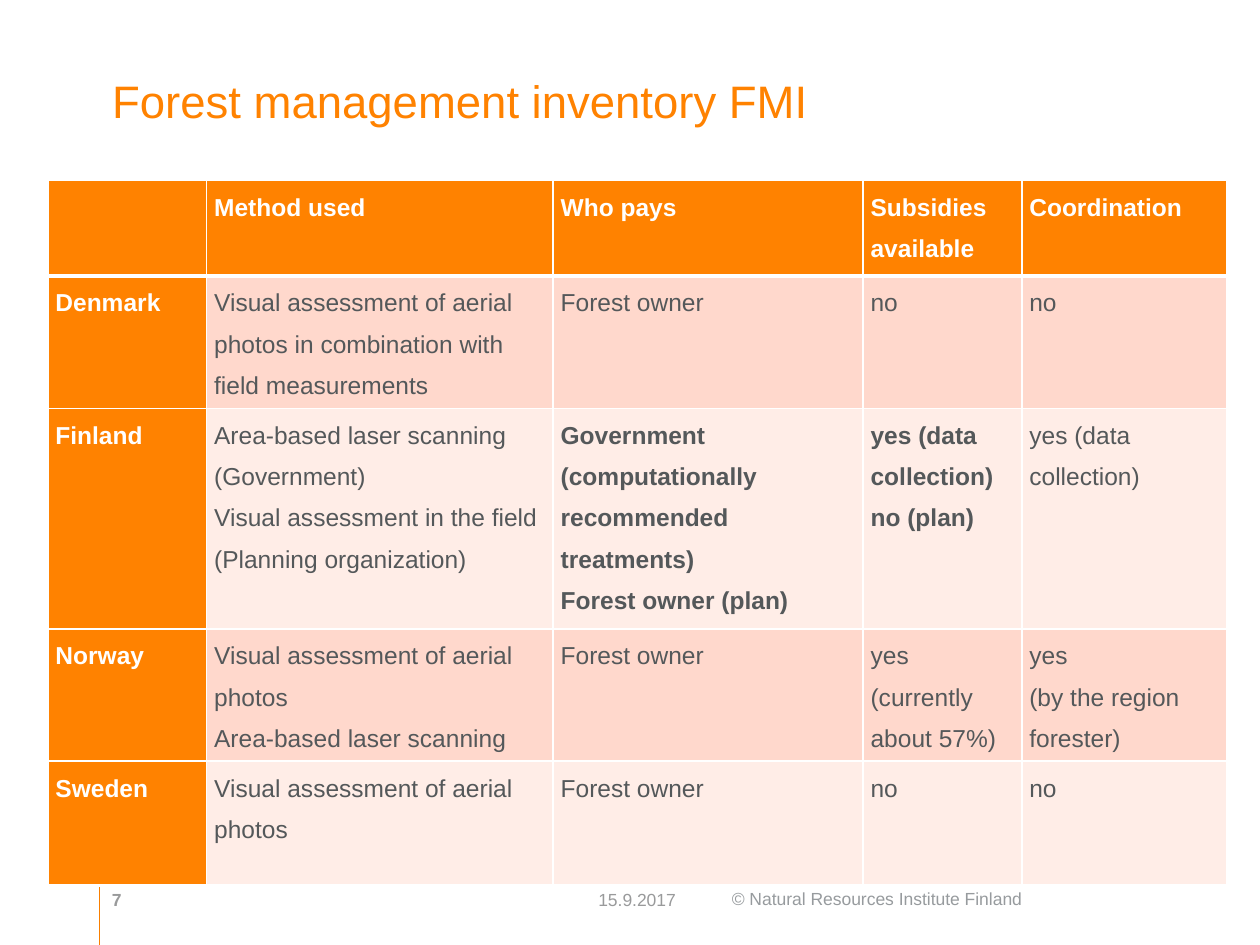
import pptx
import pptx.util
import pptx.dml.color
import pptx.enum.shapes
import pptx.enum.text
import pptx.oxml
import pptx.oxml.ns
from lxml import etree

Inches = pptx.util.Inches
RGBColor = pptx.dml.color.RGBColor
Anchor = pptx.enum.text.MSO_ANCHOR

ORANGE = RGBColor(0xFF, 0x82, 0x00)
RULE_ORANGE = RGBColor(0xF9, 0x7F, 0x00)
WHITE = RGBColor(0xFF, 0xFF, 0xFF)
DARK_GRAY = RGBColor(0x54, 0x58, 0x5A)
FOOTER_GRAY = RGBColor(0x99, 0x9A, 0x9B)
COPYRIGHT_GRAY = RGBColor(0x97, 0x9B, 0x9E)
BANDS = (RGBColor(0xFF, 0xD8, 0xCC), RGBColor(0xFF, 0xED, 0xE7))

FONT = "Arial"
MARGIN = 0.79
FOOTER_TOP = 6.97
FOOTER_HEIGHT = 0.3
COLUMN_WIDTHS = (1.26, 2.75, 2.46, 1.26, 1.63)
ROW_HEIGHTS = (0.76, 0.98, 1.66, 1.02, 0.98)
BOLD_CELLS = {(2, 2), (2, 3)}
ROWS = (
    ("", "Method used", "Who pays", "Subsidies available", "Coordination"),
    ("Denmark",
     "Visual assessment of aerial photos in combination with field measurements",
     "Forest owner", "no", "no"),
    ("Finland",
     "Area-based laser scanning (Government)\n"
     "Visual assessment in the field (Planning organization)",
     "Government (computationally recommended treatments)\nForest owner (plan)",
     "yes (data collection)\nno (plan)", "yes (data collection)"),
    ("Norway",
     "Visual assessment of aerial photos\nArea-based laser scanning",
     "Forest owner", "yes\n(currently about 57%)", "yes\n(by the region forester)"),
    ("Sweden", "Visual assessment of aerial photos", "Forest owner", "no", "no"),
)


def write_text(text_frame, text, size, color, bold=False, line_spacing=None):
    text_frame.text = text
    for paragraph in text_frame.paragraphs:
        paragraph.alignment = pptx.enum.text.PP_ALIGN.LEFT
        paragraph.line_spacing = line_spacing
        font = paragraph.font
        for target in [font] + [run.font for run in paragraph.runs]:
            target.name = FONT
            target.size = pptx.util.Pt(size)
            target.bold = bold
            target.color.rgb = color


def set_title(slide, text):
    title = slide.shapes.title
    title.left, title.top = Inches(MARGIN), Inches(0.03)
    title.width, title.height = Inches(8.25), Inches(1.03)
    write_text(title.text_frame, text, 26, ORANGE)
    title.text_frame.vertical_anchor = Anchor.BOTTOM
    title.text_frame.auto_size = pptx.enum.text.MSO_AUTO_SIZE.NONE


def add_footer_text(slide, text, left, width, color=FOOTER_GRAY, bold=False,
                    anchor=Anchor.BOTTOM, top_inset=0.05):
    box = slide.shapes.add_textbox(
        Inches(left), Inches(FOOTER_TOP), Inches(width), Inches(FOOTER_HEIGHT))
    box.text_frame.word_wrap = True
    box.text_frame.vertical_anchor = anchor
    box.text_frame.margin_top = Inches(top_inset)
    write_text(box.text_frame, text, 10, color, bold)


def add_footer_rule(slide):
    rule = slide.shapes.add_connector(
        pptx.enum.shapes.MSO_CONNECTOR.STRAIGHT,
        Inches(MARGIN), Inches(7.04), Inches(MARGIN), Inches(7.5))
    rule.line.color.rgb = RULE_ORANGE
    rule.line.width = pptx.util.Pt(1)
    properties = rule._element.find(pptx.oxml.ns.qn("p:spPr"))
    etree.SubElement(properties, pptx.oxml.ns.qn("a:effectLst"))


def set_borders(cell, widths):
    properties = cell._tc.get_or_add_tcPr()
    for position, (side, width) in enumerate(widths.items()):
        border = pptx.oxml.parse_xml(
            f'<a:{side} {pptx.oxml.ns.nsdecls("a")} w="{pptx.util.Pt(width)}">'
            f'<a:solidFill><a:srgbClr val="{WHITE}"/></a:solidFill></a:{side}>')
        properties.insert(position, border)


def format_cell(cell, text, row, column):
    heading = row == 0 or column == 0
    cell.margin_left = cell.margin_right = Inches(0.06)
    cell.margin_top = cell.margin_bottom = 0
    cell.fill.solid()
    cell.fill.fore_color.rgb = ORANGE if heading else BANDS[(row - 1) % 2]
    write_text(cell.text_frame, text, 14, WHITE if heading else DARK_GRAY,
               heading or (row, column) in BOLD_CELLS, 1.5)
    set_borders(cell, {"lnL": 1, "lnR": 1,
                       "lnT": 3 if row == 1 else 1,
                       "lnB": 3 if row == 0 else 1})


def add_inventory_table(slide):
    table = slide.shapes.add_table(
        len(ROWS), len(COLUMN_WIDTHS), Inches(0.38), Inches(1.43),
        Inches(sum(COLUMN_WIDTHS)), Inches(sum(ROW_HEIGHTS))).table
    for column, width in zip(table.columns, COLUMN_WIDTHS):
        column.width = Inches(width)
    for row, height in zip(table.rows, ROW_HEIGHTS):
        row.height = Inches(height)
    for row, texts in enumerate(ROWS):
        for column, text in enumerate(texts):
            format_cell(table.cell(row, column), text, row, column)


def main():
    presentation = pptx.Presentation()
    presentation.slide_width, presentation.slide_height = Inches(10), Inches(7.5)
    slide = presentation.slides.add_slide(presentation.slide_layouts[5])
    add_footer_rule(slide)
    add_footer_text(slide, "© Natural Resources Institute Finland", 5.71, 2.59,
                    COPYRIGHT_GRAY, anchor=Anchor.TOP, top_inset=0.08)
    set_title(slide, "Forest management inventory FMI")
    add_footer_text(slide, "7", MARGIN, 0.49, bold=True)
    add_footer_text(slide, "15.9.2017", 4.65, 0.99)
    add_inventory_table(slide)
    presentation.save("out.pptx")


if __name__ == "__main__":
    main()
